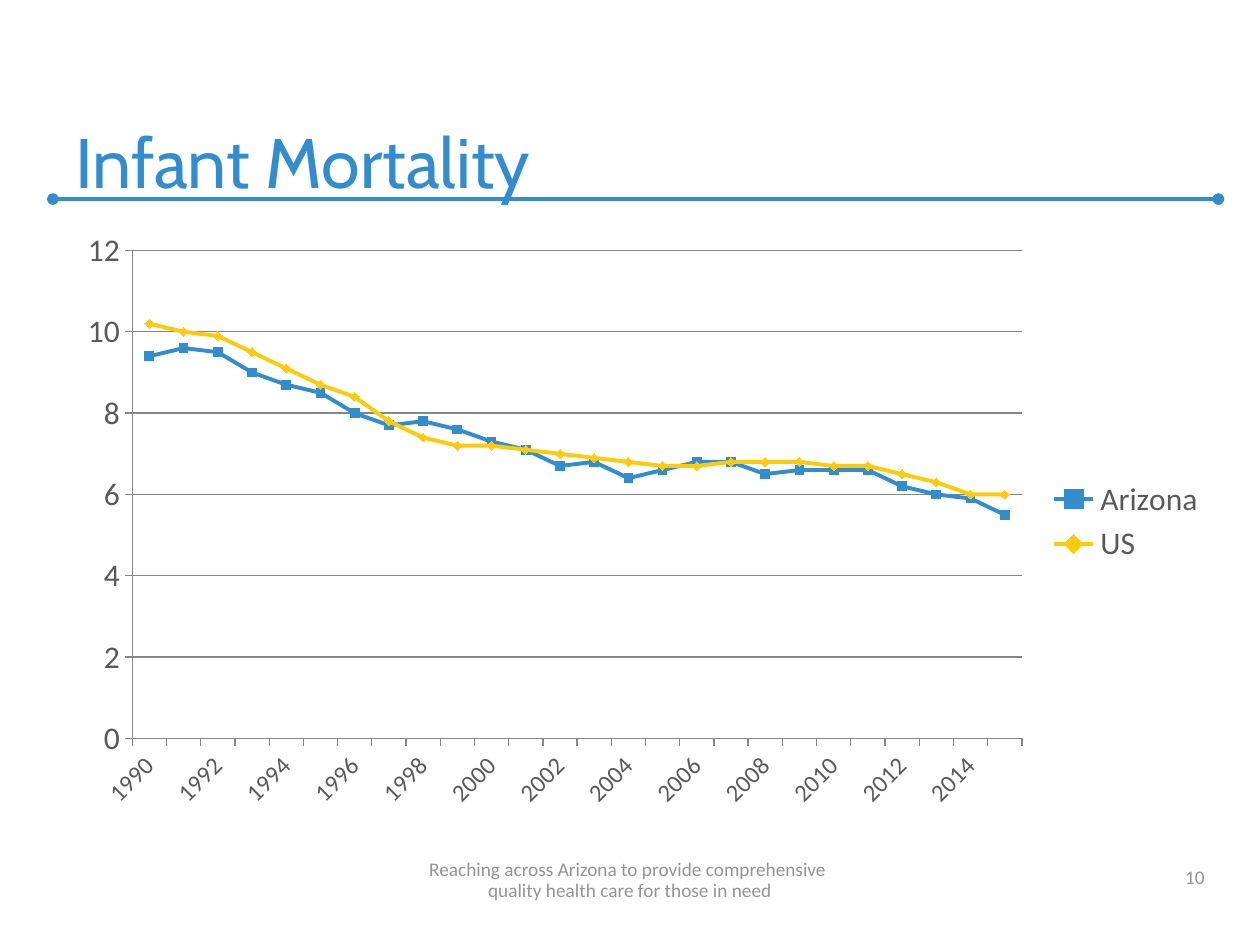
from lxml import etree
from pptx import Presentation
from pptx.chart.data import CategoryChartData
from pptx.dml.color import RGBColor
from pptx.enum.chart import XL_CHART_TYPE, XL_LEGEND_POSITION, XL_MARKER_STYLE, XL_TICK_MARK
from pptx.enum.shapes import MSO_CONNECTOR
from pptx.enum.text import MSO_ANCHOR, MSO_AUTO_SIZE, PP_ALIGN
from pptx.oxml.ns import qn
from pptx.util import Inches, Pt

LINE_MARKERS = XL_CHART_TYPE.LINE_MARKERS
LEGEND_RIGHT = XL_LEGEND_POSITION.RIGHT
SQUARE, DIAMOND = XL_MARKER_STYLE.SQUARE, XL_MARKER_STYLE.DIAMOND
TICK_OUT = XL_TICK_MARK.OUTSIDE
BOTTOM = MSO_ANCHOR.BOTTOM
LEFT, CENTER, RIGHT = PP_ALIGN.LEFT, PP_ALIGN.CENTER, PP_ALIGN.RIGHT

BLUE, RULE_BLUE, YELLOW = "318DCF", "318DCC", "FFCB08"
AXIS_GREY, TEXT_GREY, FOOTER_GREY = "868686", "595959", "939393"

TITLE_FORMAT = {"size": Pt(40), "name": "Cabin", "color": BLUE}
FOOTER_FORMAT = {"size": Pt(11), "name": "Calibri", "color": FOOTER_GREY}
CHART_FORMAT = {"size": Pt(18), "name": "Calibri", "color": TEXT_GREY}
YEAR_FORMAT = {**CHART_FORMAT, "size": Pt(14)}

YEARS = [str(year) for year in range(1990, 2016)]
SERIES = [
    ("Arizona", RULE_BLUE, SQUARE,
     [9.4, 9.6, 9.5, 9, 8.7, 8.5, 8, 7.7, 7.8, 7.6, 7.3, 7.1, 6.7,
      6.8, 6.4, 6.6, 6.8, 6.8, 6.5, 6.6, 6.6, 6.6, 6.2, 6, 5.9, 5.5]),
    ("US", YELLOW, DIAMOND,
     [10.2, 10, 9.9, 9.5, 9.1, 8.7, 8.4, 7.8, 7.4, 7.2, 7.2, 7.1, 7,
      6.9, 6.8, 6.7, 6.7, 6.8, 6.8, 6.8, 6.7, 6.7, 6.5, 6.3, 6, 6]),
]
PLOT_LAYOUT = {"x": 0.06, "y": 0.05, "w": 0.77, "h": 0.81}


def rgb(color):
    return RGBColor.from_string(color)


def format_font(font, values):
    for name, value in values.items():
        if name == "color":
            font.color.rgb = rgb(value)
        else:
            setattr(font, name, value)


def format_line(line, color, width):
    line.color.rgb = rgb(color)
    line.width = Pt(width)


def fill_text(sp, text, font, align):
    tf = sp.text_frame
    tf.word_wrap = True
    tf.auto_size = MSO_AUTO_SIZE.NONE
    tf.vertical_anchor = BOTTOM
    p = tf.paragraphs[0]
    p.text = text
    p.alignment = align
    for r in p.runs:
        format_font(r.font, font)
    return p


def add_title(s, text):
    sp = s.shapes.title
    sp.left, sp.top, sp.width, sp.height = map(Inches, (0.5, 0.33, 9.08, 1.33))
    fill_text(sp, text, TITLE_FORMAT, LEFT)


def add_footer_text(s, box, text, align):
    sp = s.shapes.add_textbox(*map(Inches, box))
    return fill_text(sp, text, FOOTER_FORMAT, align)


def add_title_rule(s):
    rule = s.shapes.add_connector(MSO_CONNECTOR.STRAIGHT, *map(Inches, (0.42, 1.58, 9.67, 1.58)))
    format_line(rule.line, RULE_BLUE, 2.25)
    ln = rule.line._get_or_add_ln()
    for end in ("a:headEnd", "a:tailEnd"):
        etree.SubElement(ln, qn(end), type="oval")
    etree.SubElement(rule._element.spPr, qn("a:effectLst"))


def set_plot_layout(chart):
    """Fix the inner plot area as fractions of the chart."""
    plot_area = chart._chartSpace.chart.plotArea
    layout = plot_area.find(qn("c:layout"))
    if layout is None:
        layout = etree.Element(qn("c:layout"))
        plot_area.insert(0, layout)
    manual = etree.SubElement(layout, qn("c:manualLayout"))
    values = {"layoutTarget": "inner", "xMode": "edge", "yMode": "edge", **PLOT_LAYOUT}
    for name, value in values.items():
        etree.SubElement(manual, qn("c:" + name), val=str(value))


def format_axes(chart):
    years, rates = chart.category_axis, chart.value_axis
    for axis in (years, rates):
        axis.major_tick_mark = TICK_OUT
        format_line(axis.format.line, AXIS_GREY, 0.75)
    rates.minimum_scale, rates.maximum_scale, rates.major_unit = 0, 12, 2
    rates.has_major_gridlines = True
    format_line(rates.major_gridlines.format.line, AXIS_GREY, 0.75)
    format_font(rates.tick_labels.font, CHART_FORMAT)
    format_font(years.tick_labels.font, YEAR_FORMAT)

    # Slanted labels for every second year
    axis_xml = years._element
    axis_xml.find(qn("c:txPr")).find(qn("a:bodyPr")).set("rot", "-2700000")
    skip = etree.Element(qn("c:tickLblSkip"), val="2")
    axis_xml.find(qn("c:noMultiLvlLbl")).addprevious(skip)


def add_line_chart(s):
    data = CategoryChartData(number_format="General")
    data.categories = YEARS
    for name, _, _, values in SERIES:
        data.add_series(name, values)
    box = map(Inches, (0.5, 1.75, 9.17, 4.78))
    chart = s.shapes.add_chart(LINE_MARKERS, *box, data).chart
    format_font(chart.font, CHART_FORMAT)
    chart.has_title = False
    chart.has_legend = True
    chart.legend.position = LEGEND_RIGHT
    chart.legend.include_in_layout = False
    format_font(chart.legend.font, CHART_FORMAT)
    format_axes(chart)
    set_plot_layout(chart)

    plot = chart.plots[0]
    plot.vary_by_categories = False
    for series, (_, color, style, _) in zip(plot.series, SERIES):
        series.smooth = False
        format_line(series.format.line, color, 2.25)
        marker = series.marker
        marker.style, marker.size = style, 5
        marker.format.fill.solid()
        marker.format.fill.fore_color.rgb = rgb(color)
        format_line(marker.format.line, color, 0.75)


def main():
    prs = Presentation()
    prs.slide_width, prs.slide_height = Inches(10), Inches(7.5)
    s = prs.slides.add_slide(prs.slide_layouts[5])
    add_title_rule(s)
    add_title(s, "Infant Mortality")
    add_line_chart(s)
    add_footer_text(s, (7.33, 6.78, 2.33, 0.32), "10", RIGHT)
    motto = add_footer_text(
        s, (0, 6.78, 10, 0.42),
        "Reaching across Arizona to provide comprehensive \v"
        "quality health care for those in need", CENTER)
    motto.line_spacing = Pt(12)
    prs.save("out.pptx")


if __name__ == "__main__":
    main()
